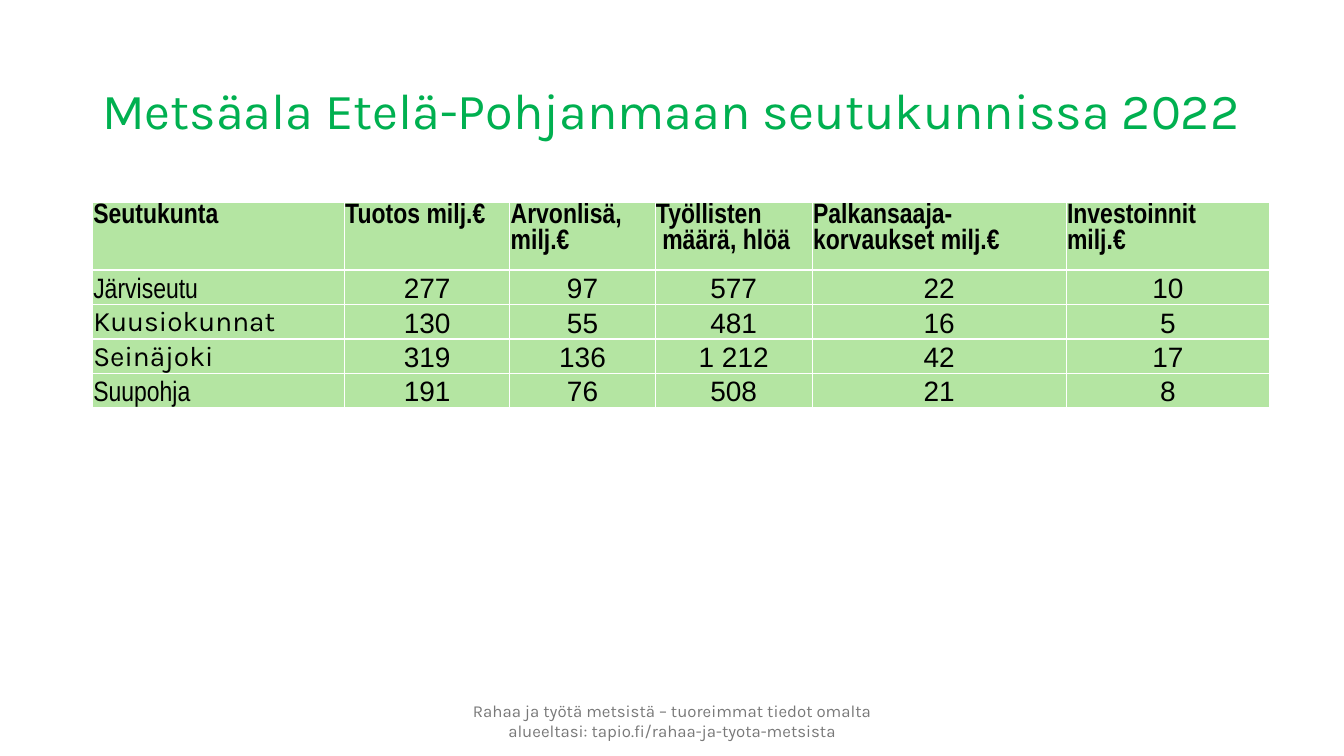
from lxml import etree
from pptx import Presentation
from pptx.dml.color import RGBColor
from pptx.enum.text import MSO_ANCHOR, PP_ALIGN
from pptx.oxml.ns import qn
from pptx.util import Cm, Pt

LEFT, CENTER = PP_ALIGN.LEFT, PP_ALIGN.CENTER
TOP, MIDDLE, BOTTOM = MSO_ANCHOR.TOP, MSO_ANCHOR.MIDDLE, MSO_ANCHOR.BOTTOM


def rgb(value):
    return RGBColor.from_string(value)


def write(tf, text, align, color, **fmt):
    """Fill a text frame, one paragraph per line of text."""
    for i, line in enumerate(text.split("\n")):
        p = tf.paragraphs[0] if i == 0 else tf.add_paragraph()
        p.alignment = align
        r = p.add_run()
        r.text = line
        r.font.color.rgb = rgb(color)
        for name, value in fmt.items():
            setattr(r.font, name, value)


prs = Presentation()
prs.slide_width, prs.slide_height = Cm(33.87), Cm(19.05)
s = prs.slides.add_slide(prs.slide_layouts[6])

# Title and footer
texts = [
    ("Metsäala Etelä-Pohjanmaan seutukunnissa 2022",
     (2.33, 1.01, 29.21, 3.68), LEFT, "00B050", 36, 0.9),
    ("Rahaa ja työtä metsistä – tuoreimmat tiedot omalta alueeltasi: "
     "tapio.fi/rahaa-ja-tyota-metsista",
     (10.82, 17.66, 12.24, 1.01), CENTER, "797979", 12, 1.0),
]
for text, box, align, color, size, spacing in texts:
    tf = s.shapes.add_textbox(*(Cm(v) for v in box)).text_frame
    tf.word_wrap = True
    tf.vertical_anchor = MIDDLE
    write(tf, text, align, color, size=Pt(size), name="Karla")
    tf.paragraphs[0].line_spacing = spacing

# Table of sub-regions
rows = [
    ("Seutukunta", "Tuotos milj.€", "Arvonlisä, milj.€", "Työllisten\n määrä, hlöä",
     "Palkansaaja-korvaukset milj.€", "Investoinnit\nmilj.€"),
    ("Järviseutu", "277", "97", "577", "22", "10"),
    ("Kuusiokunnat", "130", "55", "481", "16", "5"),
    ("Seinäjoki", "319", "136", "1 212", "42", "17"),
    ("Suupohja", "191", "76", "508", "21", "8"),
]
col_widths = [6.35, 4.17, 3.66, 3.96, 6.4, 5.13]
row_heights = [1.63] + [0.51] * 4
karla_names = ("Kuusiokunnat", "Seinäjoki")

table = s.shapes.add_table(len(rows), len(col_widths), Cm(2.33), Cm(5.09),
                           Cm(sum(col_widths)), Cm(sum(row_heights))).table
table.first_row = table.horz_banding = False
for column, width in zip(table.columns, col_widths):
    column.width = Cm(width)
for row, height in zip(table.rows, row_heights):
    row.height = Cm(height)

for i, row in enumerate(rows):
    for j, text in enumerate(row):
        cell = table.cell(i, j)
        header, number = i == 0, i > 0 and j > 0
        inset = Cm(0 if number else 0.02)
        cell.margin_left = cell.margin_right = cell.margin_top = inset
        cell.margin_bottom = 0
        cell.vertical_anchor = TOP if header else BOTTOM

        # White borders, which come before the fill in the cell's XML
        tcPr = cell._tc.get_or_add_tcPr()
        for side in ("a:lnL", "a:lnR", "a:lnT", "a:lnB"):
            ln = etree.SubElement(tcPr, qn(side), w=str(Pt(1)))
            fill = etree.SubElement(ln, qn("a:solidFill"))
            etree.SubElement(fill, qn("a:srgbClr"), val="FFFFFF")
        cell.fill.solid()
        cell.fill.fore_color.rgb = rgb("B4E5A2")

        font = "Arial" if number else "Karla" if text in karla_names else "Arial Narrow"
        write(cell.text_frame, text, CENTER if number else LEFT, "000000",
              size=Pt(20), name=font, bold=header)

prs.save("out.pptx")
